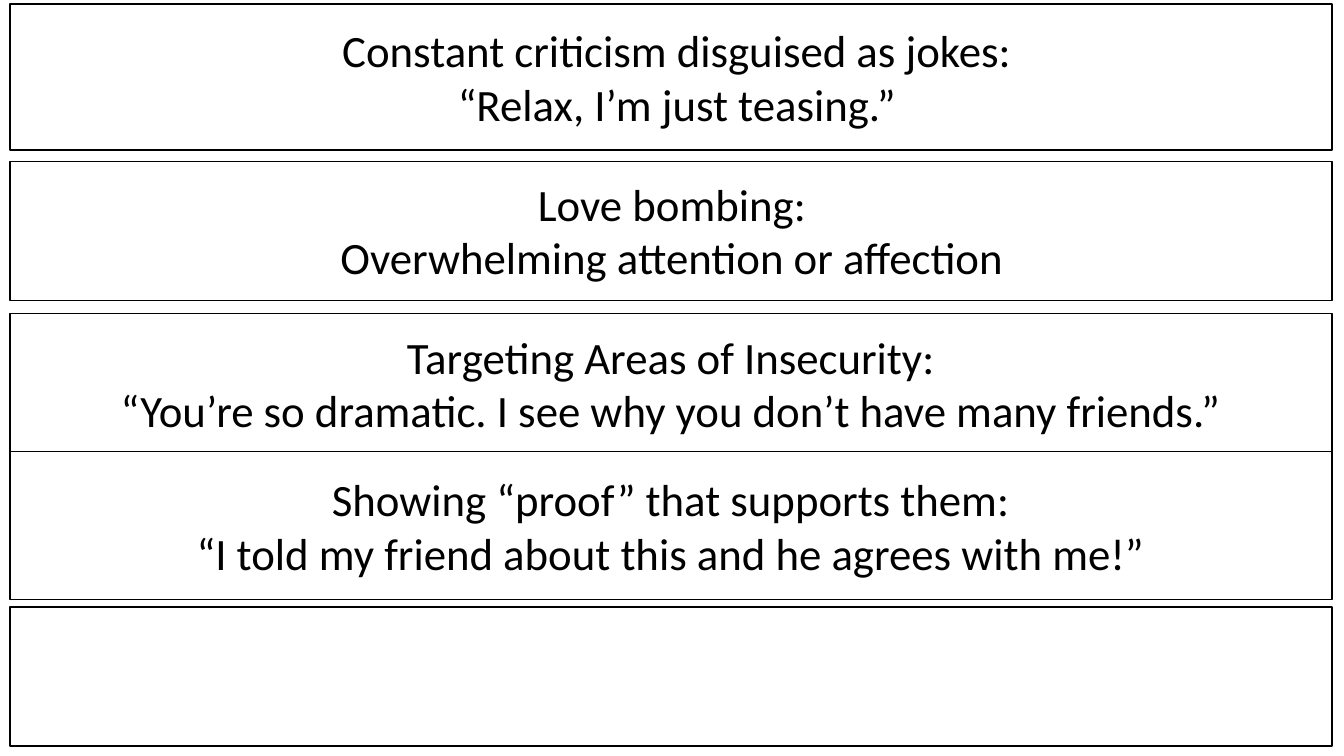
from pptx import Presentation
from pptx.dml.color import RGBColor
from pptx.enum import shapes, text
from pptx.util import Inches, Pt

BLACK = RGBColor(0, 0, 0)
WHITE = RGBColor(255, 255, 255)
LEFT, WIDTH = 0.1, 13.11


def write(shape, lines):
    frame = shape.text_frame
    frame.word_wrap = True
    frame.text = "\n".join(lines)
    for para in frame.paragraphs:
        para.alignment = text.PP_ALIGN.CENTER
        para.font.name = "Calibri"
        para.font.size = Pt(32)
        para.font.color.rgb = BLACK


deck = Presentation()
deck.slide_width = Inches(13.33)
deck.slide_height = Inches(7.5)
slide = deck.slides.add_slide(deck.slide_layouts[6])

# Cards: top, height, lines
cards = [
    (3.11, 1.38, ["Targeting Areas of Insecurity:",
                  "“You’re so dramatic. I see why you don’t have many friends.”"]),
    (4.48, 1.47, ["Showing “proof” that supports them:",
                  "“I told my friend about this and he agrees with me!”"]),
    (6.02, 1.38, []),
    (1.6, 1.38, []),
    (0.04, 1.45, []),
]
for top, height, lines in cards:
    card = slide.shapes.add_shape(
        shapes.MSO_SHAPE.RECTANGLE,
        Inches(LEFT), Inches(top), Inches(WIDTH), Inches(height))
    card.shadow.inherit = False
    card.fill.solid()
    card.fill.fore_color.rgb = WHITE
    card.line.color.rgb = BLACK
    card.line.width = Pt(1)
    card.text_frame.vertical_anchor = text.MSO_ANCHOR.MIDDLE
    if lines:
        write(card, lines)

# Labels over the two top cards: left, top, lines
labels = [
    (0.16, 0.18, ["Constant criticism disguised as jokes:",
                  "“Relax, I’m just teasing.”"]),
    (0.11, 1.7, ["Love bombing:", "Overwhelming attention or affection"]),
]
for left, top, lines in labels:
    label = slide.shapes.add_textbox(
        Inches(left), Inches(top), Inches(WIDTH), Inches(1.18))
    write(label, lines)
    label.text_frame.auto_size = text.MSO_AUTO_SIZE.SHAPE_TO_FIT_TEXT

deck.save("out.pptx")
